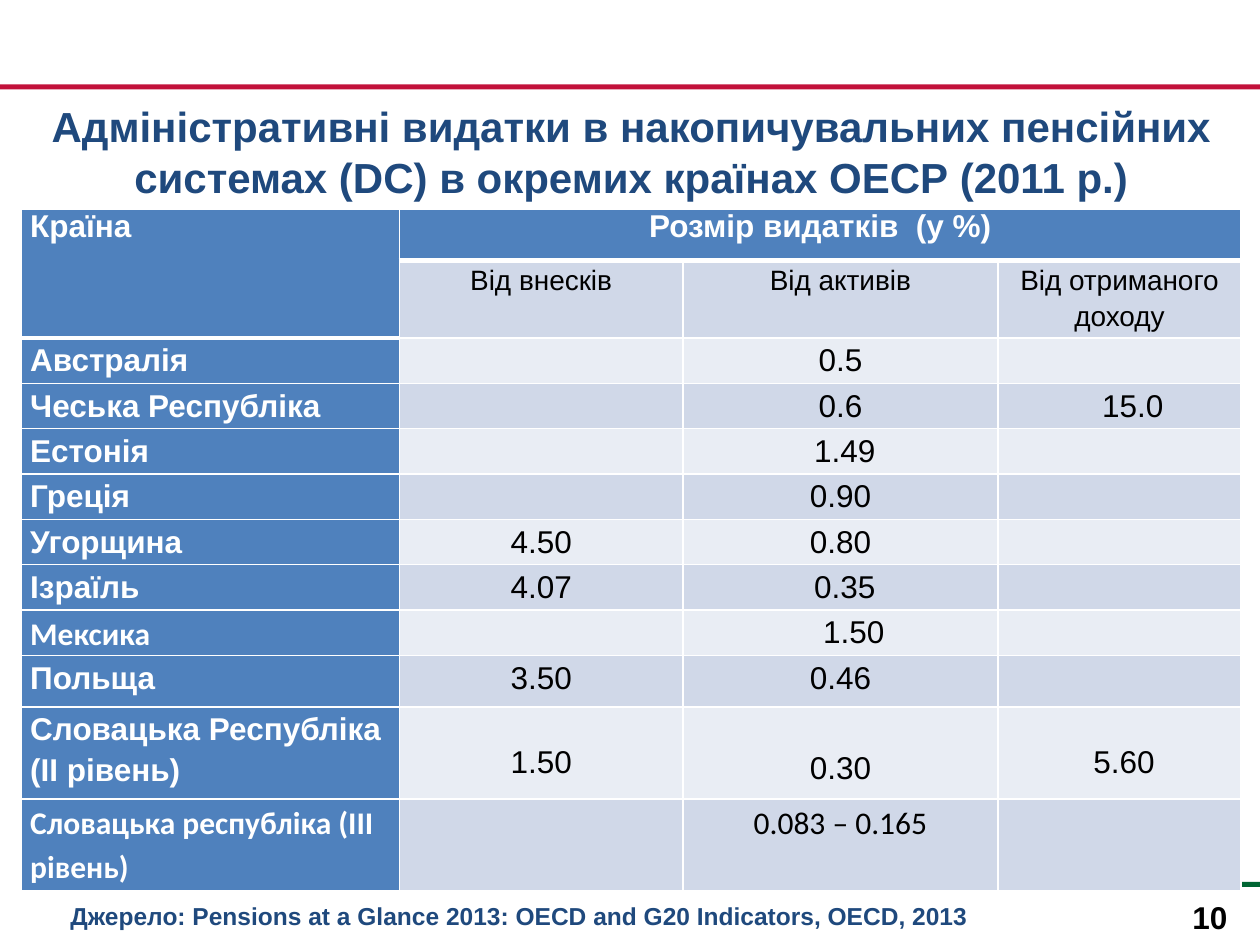
"""Builds a slide with a table of pension administration costs by country."""
import pptx
import pptx.dml.color
import pptx.enum.shapes
import pptx.enum.text
import pptx.oxml.ns
import pptx.util
from lxml import etree

Inches = pptx.util.Inches
Pt = pptx.util.Pt
LEFT, CENTER, RIGHT = (getattr(pptx.enum.text.PP_ALIGN, side) for side in ("LEFT", "CENTER", "RIGHT"))


def color(code):
    return pptx.dml.color.RGBColor.from_string(code)


def write(frame, text, size, code, bold, align, face="Arial", spacing=None):
    frame.word_wrap = True
    paragraph = frame.paragraphs[0]
    paragraph.text = text
    paragraph.alignment = align
    paragraph.line_spacing = spacing
    paragraph.font.name = face
    paragraph.font.size = Pt(size)
    paragraph.font.bold = bold
    paragraph.font.color.rgb = color(code)


deck = pptx.Presentation()
deck.slide_width, deck.slide_height = Inches(10), Inches(7.5)
slide = deck.slides.add_slide(deck.slide_layouts[6])

for left, top, width, code in ((0, 0.67, 10, "C2113A"), (4.09, 7, 5.91, "006633")):
    rule = slide.shapes.add_shape(
        pptx.enum.shapes.MSO_SHAPE.RECTANGLE, Inches(left), Inches(top), Inches(width), Inches(0.04))
    rule.shadow.inherit = False
    rule.fill.solid()
    rule.fill.fore_color.rgb = color(code)
    rule.line.fill.background()

page = slide.shapes.add_textbox(Inches(9.33), Inches(7.08), Inches(0.51), Inches(0.33))
write(page.text_frame, "10", 18, "000000", True, RIGHT)

costs = [
    ("Країна", "Розмір видатків  (у %)", "", ""),
    ("", "Від внесків", "Від активів", "Від отриманого доходу"),
    ("Австралія", "", "0.5", ""),
    ("Чеська Республіка", "", "0.6", "15.0"),
    ("Естонія", "", "1.49", ""),
    ("Греція", "", "0.90", ""),
    ("Угорщина", "4.50", "0.80", ""),
    ("Ізраїль", "4.07", "0.35", ""),
    ("Мексика", "", "1.50", ""),
    ("Польща", "3.50", "0.46", ""),
    ("Словацька Республіка (ІІ рівень)", "1.50", "0.30", "5.60"),
    ("Словацька республіка (ІІІ рівень)", "", "0.083 – 0.165", ""),
]
column_widths = [3, 2.25, 2.5, 1.93]
row_heights = [0.41, 0.61] + [0.36] * 7 + [0.41, 0.73, 0.73]
calibri_cells = {(8, 0), (11, 0), (11, 2)}
indents = {(3, 3): 0.21, (4, 2): 0.07, (7, 2): 0.07, (8, 2): 0.21, (10, 3): 0.07}
drops = {(10, 1): 0.26, (10, 2): 0.31, (10, 3): 0.26}
thick_edges = {(0, "B"), (1, "T")}

table = slide.shapes.add_table(
    len(costs), len(column_widths), Inches(0.17), Inches(1.66),
    Inches(sum(column_widths)), Inches(sum(row_heights))).table
table.first_row = table.horz_banding = False
for column, width in zip(table.columns, column_widths):
    column.width = Inches(width)
for row, height in zip(table.rows, row_heights):
    row.height = Inches(height)
table.cell(0, 0).merge(table.cell(1, 0))
table.cell(0, 1).merge(table.cell(0, 3))

for r, entries in enumerate(costs):
    for c, entry in enumerate(entries):
        cell = table.cell(r, c)
        heading = r == 0 or c == 0
        cell.margin_left = Inches(0.07 + indents.get((r, c), 0))
        cell.margin_right = Inches(0.07)
        cell.margin_top = Inches(drops.get((r, c), 0))
        cell.margin_bottom = 0
        write(cell.text_frame, entry, 16 if r == 1 else 18, "FFFFFF" if heading else "000000",
              heading, CENTER if c else LEFT, "Calibri" if (r, c) in calibri_cells else "Arial",
              1.15 if r else None)
        properties = cell._tc.get_or_add_tcPr()
        for side in "LRTB":
            thick = (r - 1 if c == 0 else r, side) in thick_edges or (r, c, side) == (0, 0, "B")
            edge = etree.SubElement(properties, pptx.oxml.ns.qn(f"a:ln{side}"), w=str(Pt(3 if thick else 1)))
            paint = etree.SubElement(edge, pptx.oxml.ns.qn("a:solidFill"))
            etree.SubElement(paint, pptx.oxml.ns.qn("a:srgbClr"), val="FFFFFF")
        cell.fill.solid()
        cell.fill.fore_color.rgb = color("4F81BD" if heading else ("E9EDF4", "D0D8E8")[r % 2])

title = slide.shapes.add_textbox(Inches(0.17), Inches(0.75), Inches(9.68), Inches(0.91))
write(title.text_frame, "Адміністративні видатки в накопичувальних пенсійних системах (DC) в окремих країнах ОЕСР (2011 р.)",
      24, "1F497D", True, CENTER)

source = slide.shapes.add_textbox(Inches(0.46), Inches(7.1), Inches(8.88), Inches(0.31))
write(source.text_frame, "Джерело: Pensions at a Glance 2013: OECD and G20 Indicators, ОЕСD, 2013",
      14, "1F497D", True, LEFT)

deck.save("out.pptx")
